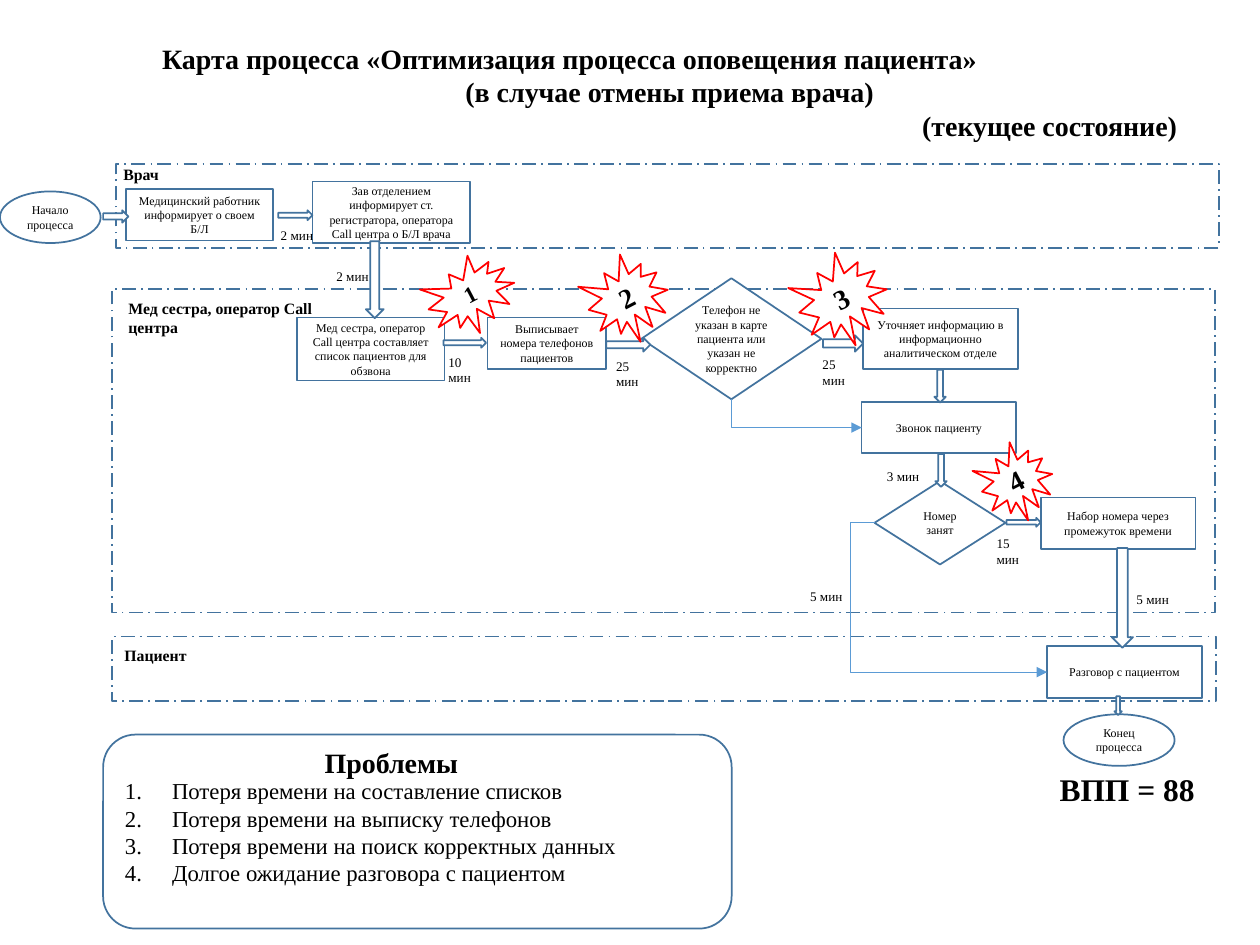
import lxml.etree
import pptx
import pptx.dml.color
import pptx.enum.dml
import pptx.enum.shapes
import pptx.enum.text
import pptx.oxml.ns
import pptx.util

Cm = pptx.util.Cm
Pt = pptx.util.Pt
qn = pptx.oxml.ns.qn
SHAPE = pptx.enum.shapes.MSO_SHAPE
ALIGN = pptx.enum.text.PP_ALIGN
ANCHOR = pptx.enum.text.MSO_ANCHOR
GROW = pptx.enum.text.MSO_AUTO_SIZE.SHAPE_TO_FIT_TEXT

COLORS = {
    "paper": "FFFFFF",
    "ink": "000000",
    "outline": "43739E",
    "link": "5B9BD5",
    "alert": "FF0000",
}
FONTS = {
    "title": {"size": Pt(16), "bold": True},
    "step": {"size": Pt(6.8), "bold": False},
    "time": {"size": Pt(7.5), "bold": False},
    "lane": {"size": Pt(9), "bold": True},
    "small_seal": {"size": Pt(13), "bold": True},
    "problem": {"size": Pt(13), "bold": False},
    "total": {"size": Pt(18), "bold": True},
}
SEAL_TILT = 332.4

LANES = [
    (2.26, 12.83, 22.25, 1.3),
    (2.26, 5.82, 22.23, 6.53),
    (2.34, 3.3, 22.23, 1.7),
]
LANE_LABELS = [
    ("Врач", (2.24, 3.2, 1.57, 0.58)),
    ("Мед сестра, оператор Call центра", (2.34, 5.89, 5.1, 0.94)),
    ("Пациент", (2.26, 12.9, 1.91, 0.58)),
]
STEPS = {
    "start": (SHAPE.OVAL, "Начало процесса", (0, 3.86, 2.03, 1.04)),
    "inform": (SHAPE.RECTANGLE, "Медицинский работник информирует о своем Б/Л",
               (2.54, 3.81, 2.97, 1.04)),
    "head": (SHAPE.RECTANGLE,
             "Зав отделением информирует ст. регистратора, оператора Call центра о Б/Л врача",
             (6.3, 3.66, 3.18, 1.24)),
    "list": (SHAPE.RECTANGLE,
             "Мед сестра, оператор Call центра составляет список пациентов для обзвона",
             (5.99, 6.4, 2.97, 1.27)),
    "phones": (SHAPE.RECTANGLE, "Выписывает номера телефонов пациентов",
               (9.83, 6.4, 2.39, 1.04)),
    "clarify": (SHAPE.RECTANGLE,
                "Уточняет информацию в информационно аналитическом отделе",
                (17.4, 6.22, 3.12, 1.22)),
    "missing": (SHAPE.DIAMOND,
                "Телефон не указан в карте пациента или указан не корректно",
                (12.93, 5.61, 3.63, 2.44)),
    "call": (SHAPE.RECTANGLE, "Звонок пациенту", (17.37, 8.1, 3.12, 1.04)),
    "busy": (SHAPE.DIAMOND, "Номер занят", (17.63, 9.7, 2.64, 1.68)),
    "redial": (SHAPE.RECTANGLE, "Набор номера через промежуток времени",
               (20.98, 10.03, 3.12, 1.04)),
    "talk": (SHAPE.RECTANGLE, "Разговор с пациентом", (21.11, 13.03, 3.12, 1.04)),
    "end": (SHAPE.OVAL, "Конец процесса", (21.44, 14.4, 2.24, 1.04)),
}
ARROWS_RIGHT = [
    (2.08, 4.24, 0.51, 0.25),
    (5.61, 4.24, 0.69, 0.2),
    (8.94, 6.81, 0.86, 0.2),
    (12.22, 6.81, 0.89, 0.28),
    (16.59, 6.76, 0.81, 0.33),
    (20.29, 10.44, 0.69, 0.18),
]
ARROWS_DOWN = [
    (6.78, 5.46, 1.55, 0.36),
    (18.62, 7.67, 0.66, 0.23),
    (18.64, 9.37, 0.66, 0.23),
    (21.62, 11.84, 2.01, 0.43),
    (22.35, 14.15, 0.38, 0.15),
]
SEALS = [
    ("1", "small_seal", (8.61, 5.21, 1.78, 1.5)),
    ("2", "title", (11.86, 5.16, 1.6, 1.75)),
    ("3", "title", (16.1, 5.13, 1.78, 1.85)),
    ("4", "title", (19.79, 8.94, 1.42, 1.57)),
]
TIMES = [
    ("2 мин", 5.41, 4.45), ("2 мин", 6.53, 5.28), ("10 мин", 8.79, 7.01),
    ("25 мин", 12.17, 7.09), ("25 мин", 16.33, 7.06), ("3 мин", 17.63, 9.32),
    ("15 мин", 19.84, 10.67), ("5 мин", 16.08, 11.73), ("5 мин", 22.66, 11.79),
]
PROBLEMS = [
    "Потеря времени на составление списков",
    "Потеря времени на выписку телефонов",
    "Потеря времени на поиск корректных данных",
    "Долгое ожидание разговора с пациентом",
]


def rgb(color):
    return pptx.dml.color.RGBColor.from_string(COLORS[color])


def write(frame, lines, font, aligns, **frame_format):
    for attribute, value in {"word_wrap": True, **frame_format}.items():
        setattr(frame, attribute, value)
    for index, (line, align) in enumerate(zip(lines, aligns)):
        paragraph = frame.add_paragraph() if index else frame.paragraphs[0]
        paragraph.alignment = align
        run = paragraph.add_run()
        run.text = line
        for attribute, value in {"name": "Times New Roman", **FONTS[font]}.items():
            setattr(run.font, attribute, value)
        run.font.color.rgb = rgb("ink")


def add_figure(slide, kind, box, line="outline", rotation=0):
    figure = slide.shapes.add_shape(kind, *map(Cm, box))
    figure.shadow.inherit = False
    figure.rotation = rotation
    figure.fill.solid()
    figure.fill.fore_color.rgb = rgb("paper")
    if line:
        figure.line.color.rgb = rgb(line)
        figure.line.width = Pt(1)
    else:
        figure.line.fill.background()
    return figure


def add_lane(slide, box):
    lane = add_figure(slide, SHAPE.RECTANGLE, box)
    lane.line.dash_style = pptx.enum.dml.MSO_LINE.LONG_DASH_DOT


def add_step(slide, kind, text, box):
    step = add_figure(slide, kind, box)
    margin = Cm(0.25 if kind == SHAPE.RECTANGLE else 0.1)
    write(step.text_frame, [text], "step", [ALIGN.CENTER], vertical_anchor=ANCHOR.MIDDLE,
          margin_left=margin, margin_right=margin)
    return step


def add_seal(slide, number, font, box):
    seal = add_figure(slide, SHAPE.EXPLOSION1, box, "alert", SEAL_TILT)
    write(seal.text_frame, [number], font, [ALIGN.CENTER], vertical_anchor=ANCHOR.MIDDLE)


def add_label(slide, lines, font, box, aligns=(ALIGN.LEFT,)):
    label = slide.shapes.add_textbox(*map(Cm, box))
    write(label.text_frame, lines, font, aligns, auto_size=GROW)


def add_link(slide, source, source_side, target, target_side):
    elbow = pptx.enum.shapes.MSO_CONNECTOR.ELBOW
    link = slide.shapes.add_connector(elbow, 0, 0, 0, 0)
    link.begin_connect(source, source_side)
    link.end_connect(target, target_side)
    link.line.color.rgb = rgb("link")
    link.line.width = Pt(0.5)
    properties = link._element.spPr
    lxml.etree.SubElement(properties.find(qn("a:ln")), qn("a:tailEnd"), type="triangle")
    lxml.etree.SubElement(properties, qn("a:effectLst"))
    return link


def bend_once(link):
    width, height = link.width, link.height
    link.left += (width - height) // 2
    link.top += (height - width) // 2
    link.width, link.height = height, width
    properties = link._element.spPr
    for attribute, value in {"rot": "16200000", "flipH": "1"}.items():
        properties.find(qn("a:xfrm")).set(attribute, value)
    properties.find(qn("a:prstGeom")).set("prst", "bentConnector2")


def bend_outside(link, ratio):
    guides = link._element.spPr.find(qn("a:prstGeom")).get_or_add_avLst()
    lxml.etree.SubElement(guides, qn("a:gd"), name="adj1", fmla=f"val {round(ratio * 100000)}")


def add_problems(slide):
    panel = add_figure(slide, SHAPE.ROUNDED_RECTANGLE, (2.08, 14.81, 12.67, 3.91))
    write(panel.text_frame, PROBLEMS, "problem", [ALIGN.LEFT] * len(PROBLEMS),
          vertical_anchor=ANCHOR.MIDDLE)
    for paragraph in panel.text_frame.paragraphs:
        numbering = paragraph._p.get_or_add_pPr()
        for attribute, indent in {"marL": Cm(0.95), "indent": -Cm(0.95)}.items():
            numbering.set(attribute, str(int(indent)))
        lxml.etree.SubElement(numbering, qn("a:buAutoNum"), type="arabicPeriod")
    heading = add_figure(slide, SHAPE.RECTANGLE, (5.11, 14.91, 5.56, 0.84), None)
    write(heading.text_frame, ["Проблемы"], "title", [ALIGN.CENTER],
          vertical_anchor=ANCHOR.TOP, auto_size=GROW)


def main():
    deck = pptx.Presentation()
    deck.slide_width, deck.slide_height = Cm(25.4), Cm(19.05)
    slide = deck.slides.add_slide(deck.slide_layouts[6])

    title = ["Карта процесса «Оптимизация процесса оповещения пациента»",
             "(в случае отмены приема врача)", "(текущее состояние)"]
    add_label(slide, title, "title", (3.02, 0.71, 20.96, 2.31),
              (ALIGN.LEFT, ALIGN.CENTER, ALIGN.RIGHT))
    for box in LANES:
        add_lane(slide, box)
    steps = {key: add_step(slide, *step) for key, step in STEPS.items()}
    for rotation, boxes in ((0, ARROWS_RIGHT), (90, ARROWS_DOWN)):
        for box in boxes:
            add_figure(slide, SHAPE.RIGHT_ARROW, box, rotation=rotation)
    bend_once(add_link(slide, steps["missing"], 2, steps["call"], 1))
    bend_outside(add_link(slide, steps["busy"], 1, steps["talk"], 1), -0.14)
    for seal in SEALS:
        add_seal(slide, *seal)
    for text, left, top in TIMES:
        add_label(slide, [text], "time", (left, top, 1.22, 0.84 if len(text) > 5 else 0.53))
    for text, box in LANE_LABELS:
        add_label(slide, [text], "lane", box)
    add_problems(slide)
    add_label(slide, ["ВПП = 88"], "total", (21.11, 15.39, 3.27, 1.02))
    deck.save("out.pptx")


if __name__ == "__main__":
    main()
